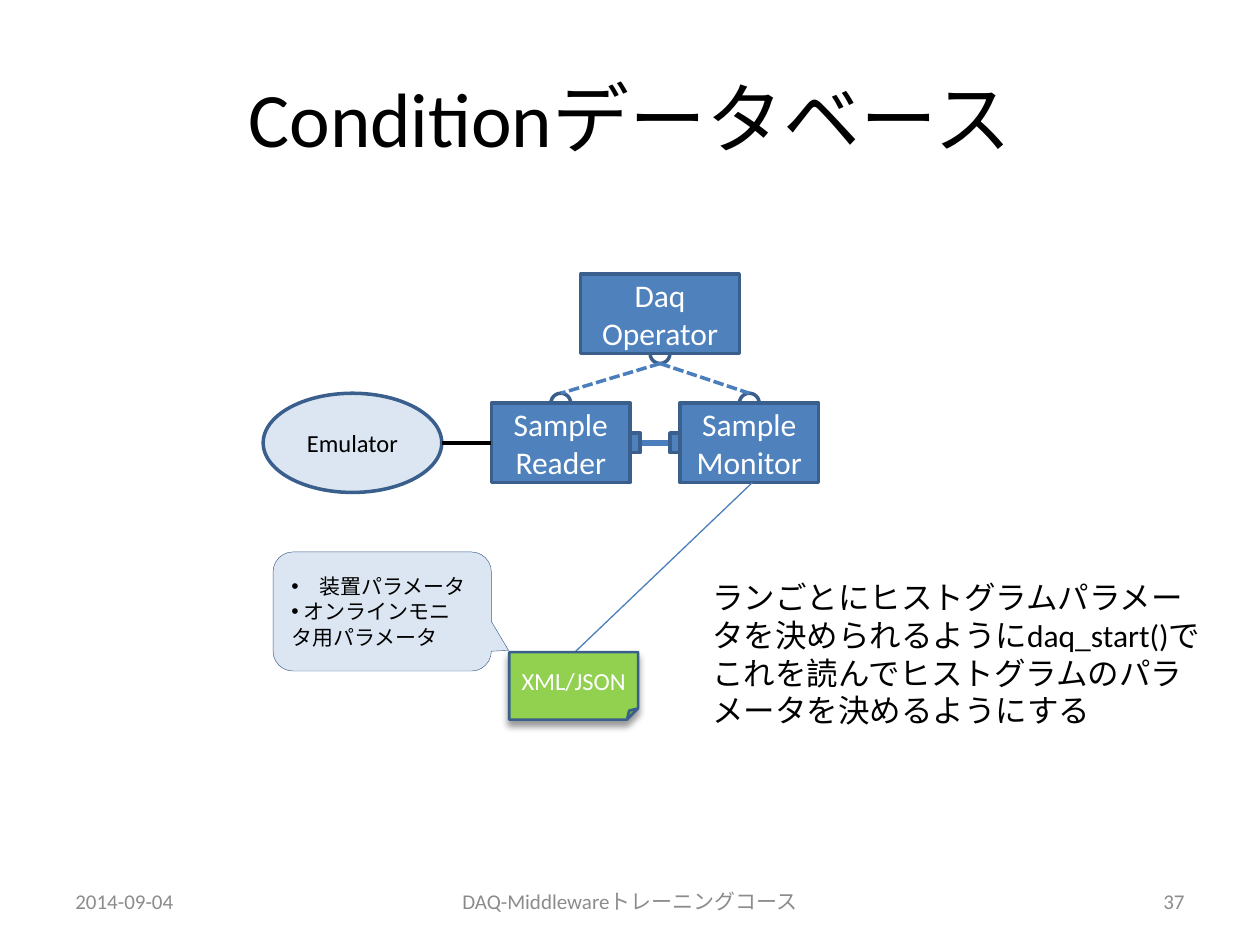
"""Build the Condition database slide: a DAQ component diagram with its parameter file."""
import pptx
import pptx.dml.color
import pptx.enum.dml
import pptx.enum.shapes
import pptx.enum.text
import pptx.oxml.ns
import pptx.util
from lxml import etree

SHAPE = pptx.enum.shapes.MSO_SHAPE
ALIGN = pptx.enum.text.PP_ALIGN
ANCHOR = pptx.enum.text.MSO_ANCHOR

THEME = {
    "font": "Calibri",
    "black": "000000", "white": "FFFFFF", "grey": "8C8C8C",
    "blue": "4F81BD", "border": "3A5F8C", "link": "4B7EBC",
    "pale": "DCE6F2", "green": "92D050",
    "title": 44, "body": 18, "label": 14, "small": 12,
}
WIDTH, HEIGHT = 10, 7.5
UNIT = 0.2 / 2.54
ORIGIN = (3.9, 3.2)

TITLE = "Conditionデータベース"
FOOTER = [
    ("2014-09-04", 0.05, 0.233, ALIGN.LEFT),
    ("DAQ-Middlewareトレーニングコース", 0.315, 0.37, ALIGN.CENTER),
    ("37", 0.717, 0.233, ALIGN.RIGHT),
]
REMARK = ("ランごとにヒストグラムパラメータを決められるようにdaq_start()で"
          "これを読んでヒストグラムのパラメータを決めるようにする")
REMARK_CELL = (21, 17, 53, 16.6)
BULLETS = ["　装置パラメータ", " オンラインモニタ用パラメータ"]
CALLOUT_CELL = (-22, 15, 22, 12)
CALLOUT_TAIL = (0.579, 0.327, 0.167)
FILE_CELL = (1.8, 25.1, 13, 6.8)

SERVICE_PORTS = [(16, -6, 2, 2), (6, -1, 2, 2), (25, -1, 2, 2)]
COMPONENTS = [
    (["Sample", "Reader"], (0, 0, 14, 8)),
    (["Sample", "Monitor"], (19, 0, 14, 8)),
    (["Daq Operator"], (9, -13, 16, 8)),
]
EMULATOR_CELL = (-23, -1, 18, 10)
LINKS = [
    ((-5, 4), (0, 4), "black", 2, False),
    ((14, 4), (19, 4), "link", 3, False),
    ((17, -4), (7, -1), "link", 2, True),
    ((17, -4), (26, -1), "link", 2, True),
    ((26.3, 8), (8.4, 25.1), "link", 0.75, False),
]
DATA_PORTS = [(14, 3, 1, 2), (18, 3, 1, 2)]


def color(name):
    return pptx.dml.color.RGBColor.from_string(THEME[name])


def place(column, row):
    return (pptx.util.Inches(ORIGIN[0] + column * UNIT),
            pptx.util.Inches(ORIGIN[1] + row * UNIT))


def frame_of(cell):
    column, row, columns, rows = cell
    return (*place(column, row), pptx.util.Inches(columns * UNIT), pptx.util.Inches(rows * UNIT))


def share(left, top, width, height):
    return [pptx.util.Inches(part * side)
            for part, side in zip((left, top, width, height), (WIDTH, HEIGHT) * 2)]


def write(shape, lines, size, ink, align, anchor=ANCHOR.MIDDLE):
    frame = shape.text_frame
    frame.text = "\n".join(lines)
    frame.word_wrap = True
    frame.vertical_anchor = anchor
    for para in frame.paragraphs:
        para.alignment = align
        for span in para.runs:
            span.font.name = THEME["font"]
            span.font.size = pptx.util.Pt(THEME[size])
            span.font.color.rgb = color(ink)


def add_text(page, bounds, text, size, ink, align, anchor=ANCHOR.MIDDLE):
    write(page.shapes.add_textbox(*bounds), [text], size, ink, align, anchor)


def add_box(page, kind, cell, fill, weight=2):
    box = page.shapes.add_shape(kind, *frame_of(cell))
    box.shadow.inherit = False
    box.fill.solid()
    box.fill.fore_color.rgb = color(fill)
    box.line.color.rgb = color("border")
    box.line.width = pptx.util.Pt(weight)
    return box


def add_child(parent, tag, **attributes):
    return etree.SubElement(parent, pptx.oxml.ns.qn(tag), attributes)


def add_link(page, start, end, ink, weight, dashed):
    link = page.shapes.add_connector(
        pptx.enum.shapes.MSO_CONNECTOR.STRAIGHT, *place(*start), *place(*end))
    link.line.color.rgb = color(ink)
    link.line.width = pptx.util.Pt(weight)
    if dashed:
        link.line.dash_style = pptx.enum.dml.MSO_LINE.SQUARE_DOT
    add_child(link.element.spPr, "a:effectLst")


def add_shadow(box):
    effects = box.element.spPr.find(pptx.oxml.ns.qn("a:effectLst"))
    shadow = add_child(effects, "a:outerShdw", blurRad=str(pptx.util.Pt(4)),
                       dist=str(pptx.util.Pt(3)), dir="5400000", rotWithShape="0")
    ink = add_child(shadow, "a:srgbClr", val=THEME["black"])
    add_child(ink, "a:alpha", val="40000")


def add_callout(page):
    callout = add_box(page, SHAPE.ROUNDED_RECTANGULAR_CALLOUT, CALLOUT_CELL, "pale", 0.25)
    for index, value in enumerate(CALLOUT_TAIL):
        callout.adjustments[index] = value
    write(callout, BULLETS, "small", "black", ALIGN.LEFT)
    callout.text_frame.margin_right = pptx.util.Inches(0.12)
    for para in callout.text_frame.paragraphs:
        properties = para._p.get_or_add_pPr()
        add_child(properties, "a:buFont", typeface="Arial")
        add_child(properties, "a:buChar", char="•")


def add_file(page):
    box = add_box(page, SHAPE.FOLDED_CORNER, FILE_CELL, "green", 1.5)
    add_shadow(box)
    write(box, ["XML/JSON"], "label", "white", ALIGN.CENTER)
    box.text_frame.margin_left = box.text_frame.margin_right = pptx.util.Inches(0.05)


def add_diagram(page):
    for cell in SERVICE_PORTS:
        add_box(page, SHAPE.OVAL, cell, "white")
    for lines, cell in COMPONENTS:
        box = add_box(page, SHAPE.RECTANGLE, cell, "blue")
        write(box, lines, "body", "white", ALIGN.CENTER)
    emulator = add_box(page, SHAPE.OVAL, EMULATOR_CELL, "pale")
    write(emulator, ["Emulator"], "label", "black", ALIGN.CENTER)
    for link in LINKS:
        add_link(page, *link)
    for cell in DATA_PORTS:
        add_box(page, SHAPE.RECTANGLE, cell, "blue")
    add_file(page)
    add_callout(page)


def main():
    deck = pptx.Presentation()
    deck.slide_width = pptx.util.Inches(WIDTH)
    deck.slide_height = pptx.util.Inches(HEIGHT)
    page = deck.slides.add_slide(deck.slide_layouts[6])
    add_text(page, share(0.05, 0.04, 0.9, 0.167), TITLE, "title", "black", ALIGN.CENTER)
    for text, left, width, align in FOOTER:
        add_text(page, share(left, 0.927, width, 0.053), text, "small", "grey", align)
    add_diagram(page)
    add_text(page, frame_of(REMARK_CELL), REMARK, "body", "black", ALIGN.LEFT, ANCHOR.TOP)
    deck.save("out.pptx")


if __name__ == "__main__":
    main()
